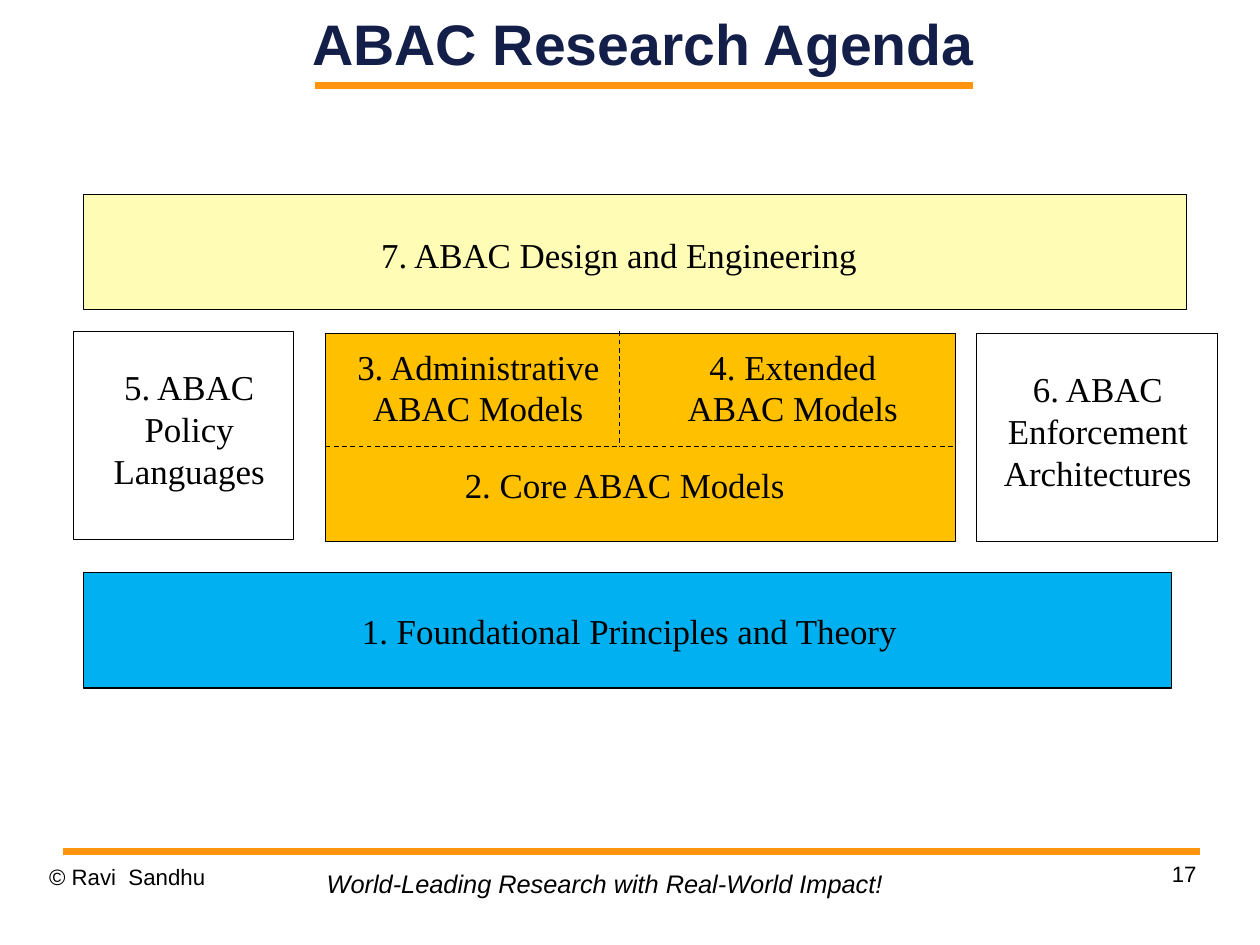
from pptx import Presentation
from pptx import util as u
from pptx.dml.color import RGBColor
from pptx.enum import dml, shapes, text
from pptx.oxml.ns import qn
from lxml import etree

PX = 9144  # EMU per px, 100 px to the inch
COLORS = {"ink": "000000", "title": "131F49", "rule": "FF950E", "white": "FFFFFF",
          "blue": "00B0F0", "amber": "FFC000", "cream": "FFFDB5"}
LEFT, CENTER, RIGHT = text.PP_ALIGN.LEFT, text.PP_ALIGN.CENTER, text.PP_ALIGN.RIGHT
TOP, MIDDLE = text.MSO_ANCHOR.TOP, text.MSO_ANCHOR.MIDDLE
SERIF, SANS = "Times New Roman", "Arial"
PAD_X, PAD_Y = 11, 6


def px(*lengths):
    return [u.Emu(length * PX) for length in lengths]


def color(name):
    return RGBColor.from_string(COLORS[name])


def write(frame, words, size, font=SERIF, ink="ink", align=CENTER, anchor=TOP,
          insets=(PAD_X, PAD_Y, PAD_X, PAD_Y), wrap=True, bold=False, italic=False):
    frame.auto_size = text.MSO_AUTO_SIZE.NONE
    frame.word_wrap = wrap
    frame.vertical_anchor = anchor
    (frame.margin_left, frame.margin_top,
     frame.margin_right, frame.margin_bottom) = px(*insets)
    frame.text = words
    for para in frame.paragraphs:
        para.alignment = align
        para.font.name, para.font.size = font, u.Pt(size)
        para.font.bold, para.font.italic = bold, italic
        para.font.color.rgb = color(ink)


def add_text(page, box, words, size, **style):
    label = page.shapes.add_textbox(*px(*box))
    write(label.text_frame, words, size, **style)


def add_line(page, start, end, ink, width, dashed=False):
    line = page.shapes.add_connector(shapes.MSO_CONNECTOR.STRAIGHT, *px(*start, *end))
    line.line.color.rgb = color(ink)
    line.line.width = u.Pt(width)
    if dashed:
        line.line.dash_style = dml.MSO_LINE.DASH
    etree.SubElement(line._element.spPr, qn("a:effectLst"))


def add_panel(page, box, fill, words="", label=None):
    """Outlined rectangle; label is the (left, top, width) of its text within it."""
    panel = page.shapes.add_shape(shapes.MSO_SHAPE.RECTANGLE, *px(*box))
    panel.shadow.inherit = False
    panel.fill.solid()
    panel.fill.fore_color.rgb = color(fill)
    panel.line.color.rgb = color("ink")
    panel.line.width = u.Pt(0.75)
    if words:
        left, top, width = label
        insets = (left + PAD_X, top + PAD_Y, box[2] - left - width + PAD_X, 0)
        write(panel.text_frame, words, 22, insets=insets)


def add_header(page, box):
    left, top, width, height = box
    title = page.shapes.title
    title.left, title.top, title.width, title.height = px(*box)
    write(title.text_frame, "ABAC Research Agenda", 36, font=SANS, ink="title",
          anchor=MIDDLE, insets=(0, 0, 0, 0), bold=True)
    bottom = top + height
    add_line(page, (left + 35, bottom), (left + 610, bottom), "rule", 4.31)


def add_models(page, box):
    left, top, width, height = box
    add_panel(page, box, "amber")
    # Dashed dividers
    split_x, split_y = left + 257, top + 99
    add_line(page, (left, split_y), (left + width, split_y), "ink", 0.75, dashed=True)
    add_line(page, (split_x, top - 2), (split_x, split_y), "ink", 0.75, dashed=True)
    # Three groups of models
    add_text(page, (left + 10, top + 4, 247, 85), "3. Administrative\nABAC Models", 22)
    add_text(page, (left + 294, top + 4, 229, 85), "4. Extended\nABAC Models", 22)
    add_text(page, (left + 18, top + 108, 487, 48), "2. Core ABAC Models", 22)


def add_agenda(page, box):
    left, top, width, height = box
    # Layers above and below
    add_panel(page, (left + 9, top, 965, 101), "cream",
              "7. ABAC Design and Engineering", (65, 28, 807))
    add_panel(page, (left + 9, top + 331, 952, 101), "blue",
              "1. Foundational Principles and Theory", (74, 26, 807))
    # Middle row
    add_panel(page, (left, top + 120, 193, 182), "white",
              "5. ABAC Policy Languages", (19, 24, 165))
    add_models(page, (left + 221, top + 122, 551, 182))
    add_panel(page, (left + width - 211, top + 122, 211, 182), "white",
              "6. ABAC Enforcement Architectures", (10, 24, 193))


def add_footer(page, box):
    left, top, width, height = box
    add_line(page, (left + 12, top), (left + width + 3, top), "rule", 4.31)
    plain = {"font": SANS, "insets": (0, 0, 0, 0)}
    add_text(page, (left, top + 10, 257, 57), "© Ravi  Sandhu", 14, align=LEFT, **plain)
    add_text(page, (left + 233, top + 10, 508, 37),
             "World-Leading Research with Real-World Impact!", 16, font=SANS,
             align=LEFT, insets=(10, 5, 10, 5), wrap=False, italic=True)
    add_text(page, (left + width - 257, top + 8, 257, 57), "17", 14, align=RIGHT, **plain)


def main():
    deck = Presentation()
    deck.slide_width, deck.slide_height = u.Cm(28), u.Cm(21)
    page = deck.slides.add_slide(deck.slide_layouts[5])
    add_header(page, (241, 0, 643, 75))
    add_agenda(page, (64, 170, 1001, 432))
    add_footer(page, (43, 745, 1004, 67))
    deck.save("out.pptx")


if __name__ == "__main__":
    main()
